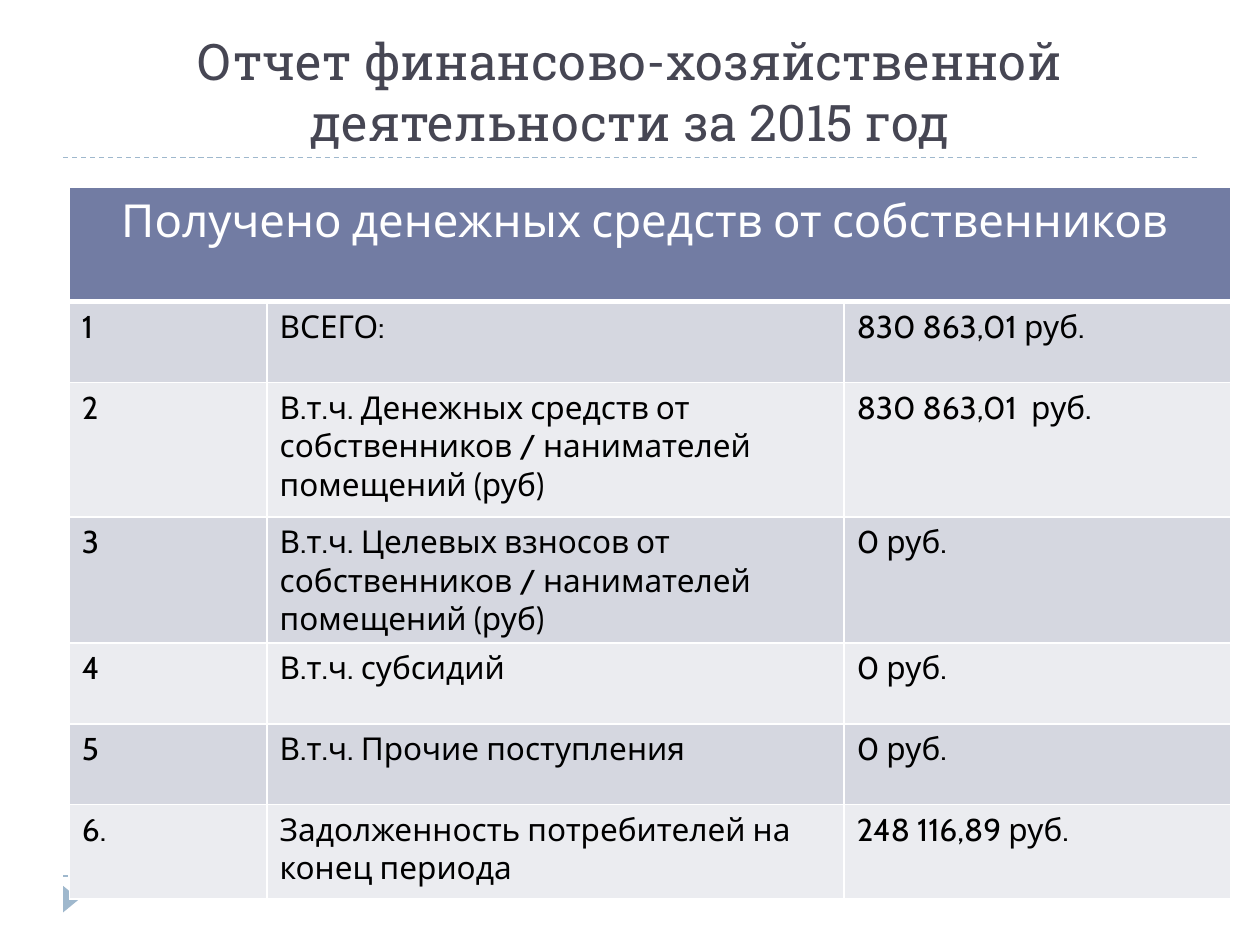
import dataclasses

import pptx
import pptx.dml.color
import pptx.enum.dml
import pptx.enum.shapes
import pptx.enum.text
import pptx.oxml
import pptx.oxml.ns
import pptx.util


@dataclasses.dataclass(frozen=True)
class Theme:
    title_font: str = "Roboto Slab"
    body_font: str = "Cabin"
    title_size: float = 28.8
    header_size: float = 26
    body_size: float = 18
    rule_width: float = 0.75
    border_width: float = 1
    header_border_width: float = 3
    title_color: str = "464653"
    accent: str = "9FB8CD"
    header_fill: str = "727CA3"
    bands: tuple = ("D5D7E0", "EBECF0")
    white: str = "FFFFFF"
    black: str = "000000"


THEME = Theme()
WIDTH, HEIGHT = 10, 7.5
MARGIN = 0.05
TITLE_BOTTOM = 1 / 6
FOOTER_TOP = 0.927
COLUMNS = (1.57, 4.58, 3.07)
ROWS = (0.91, 0.64, 1.07, 0.98, 0.64, 0.64, 0.75)
HEADING = "Отчет финансово-хозяйственной деятельности за 2015 год"
TABLE_HEADING = "Получено денежных средств от собственников "
RECEIPTS = (
    ("1", "ВСЕГО:", "830 863,01 руб."),
    ("2", "В.т.ч. Денежных средств от собственников / нанимателей помещений (руб)",
     "830 863,01  руб."),
    ("3", "В.т.ч. Целевых взносов от собственников / нанимателей помещений (руб)",
     "0 руб."),
    ("4", "В.т.ч. субсидий", "0 руб."),
    ("5", "В.т.ч. Прочие поступления", "0 руб."),
    ("6.", "Задолженность потребителей на конец периода", "248 116,89 руб."),
)


def color(value):
    return pptx.dml.color.RGBColor.from_string(value)


def across(share):
    return pptx.util.Inches(WIDTH * share)


def down(share):
    return pptx.util.Inches(HEIGHT * share)


def write(frame, text, font, size, ink, centered=False):
    para = frame.paragraphs[0]
    if centered:
        para.alignment = pptx.enum.text.PP_ALIGN.CENTER
    span = para.add_run()
    span.text = text
    for name, value in {"name": font, "size": pptx.util.Pt(size)}.items():
        setattr(span.font, name, value)
    span.font.color.rgb = color(ink)


def add_title(page):
    box = page.shapes.add_textbox(
        across(MARGIN), down(1 / 30), across(1 - 2 * MARGIN), down(TITLE_BOTTOM - 1 / 30)
    )
    layout = {"word_wrap": True, "vertical_anchor": pptx.enum.text.MSO_ANCHOR.BOTTOM}
    for name, value in layout.items():
        setattr(box.text_frame, name, value)
    write(box.text_frame, HEADING, THEME.title_font, THEME.title_size,
          THEME.title_color, centered=True)


def add_rule(page, share):
    rule = page.shapes.add_connector(
        pptx.enum.shapes.MSO_CONNECTOR.STRAIGHT,
        across(MARGIN), down(share), across(1 - MARGIN), down(share),
    )
    rule.line.color.rgb = color(THEME.accent)
    line_format = {
        "width": pptx.util.Pt(THEME.rule_width),
        "dash_style": pptx.enum.dml.MSO_LINE.DASH,
    }
    for name, value in line_format.items():
        setattr(rule.line, name, value)
    properties = rule.element.find(pptx.oxml.ns.qn("p:spPr"))
    properties.append(
        pptx.oxml.parse_xml(f"<a:effectLst {pptx.oxml.ns.nsdecls('a')}/>")
    )


def add_marker(page):
    marker = page.shapes.add_shape(
        pptx.enum.shapes.MSO_SHAPE.ISOSCELES_TRIANGLE,
        across(0.046), down(0.943), across(0.021), down(0.017),
    )
    marker.rotation = 90
    marker.shadow.inherit = False
    marker.fill.solid()
    marker.fill.fore_color.rgb = color(THEME.accent)
    marker.line.fill.background()


def add_borders(cell, bottom_width):
    properties = cell._tc.get_or_add_tcPr()
    widths = dict.fromkeys("LRT", THEME.border_width) | {"B": bottom_width}
    for side, width in widths.items():
        properties.append(pptx.oxml.parse_xml(
            f'<a:ln{side} {pptx.oxml.ns.nsdecls("a")} w="{pptx.util.Pt(width)}">'
            f'<a:solidFill><a:srgbClr val="{THEME.white}"/></a:solidFill></a:ln{side}>'
        ))


def style_cell(cell, fill, bottom_width):
    add_borders(cell, bottom_width)
    cell.fill.solid()
    cell.fill.fore_color.rgb = color(fill)


def add_receipts_table(page):
    table = page.shapes.add_table(
        len(ROWS), len(COLUMNS), across(0.055), down(0.198),
        pptx.util.Inches(sum(COLUMNS)), pptx.util.Inches(sum(ROWS)),
    ).table
    for column, width in zip(table.columns, COLUMNS):
        column.width = pptx.util.Inches(width)
    for row, height in zip(table.rows, ROWS):
        row.height = pptx.util.Inches(height)

    header = table.cell(0, 0)
    header.merge(table.cell(0, len(COLUMNS) - 1))
    for cell in table.rows[0].cells:
        style_cell(cell, THEME.header_fill, THEME.header_border_width)
    write(header.text_frame, TABLE_HEADING, THEME.body_font, THEME.header_size,
          THEME.white, centered=True)

    for index, texts in enumerate(RECEIPTS):
        for cell, text in zip(table.rows[index + 1].cells, texts):
            style_cell(cell, THEME.bands[index % 2], THEME.border_width)
            write(cell.text_frame, text, THEME.body_font, THEME.body_size, THEME.black)


def main():
    deck = pptx.Presentation()
    deck.slide_width, deck.slide_height = across(1), down(1)
    page = deck.slides.add_slide(deck.slide_layouts[6])
    for share in (FOOTER_TOP, TITLE_BOTTOM):
        add_rule(page, share)
    add_marker(page)
    add_title(page)
    add_receipts_table(page)
    deck.save("out.pptx")


if __name__ == "__main__":
    main()
